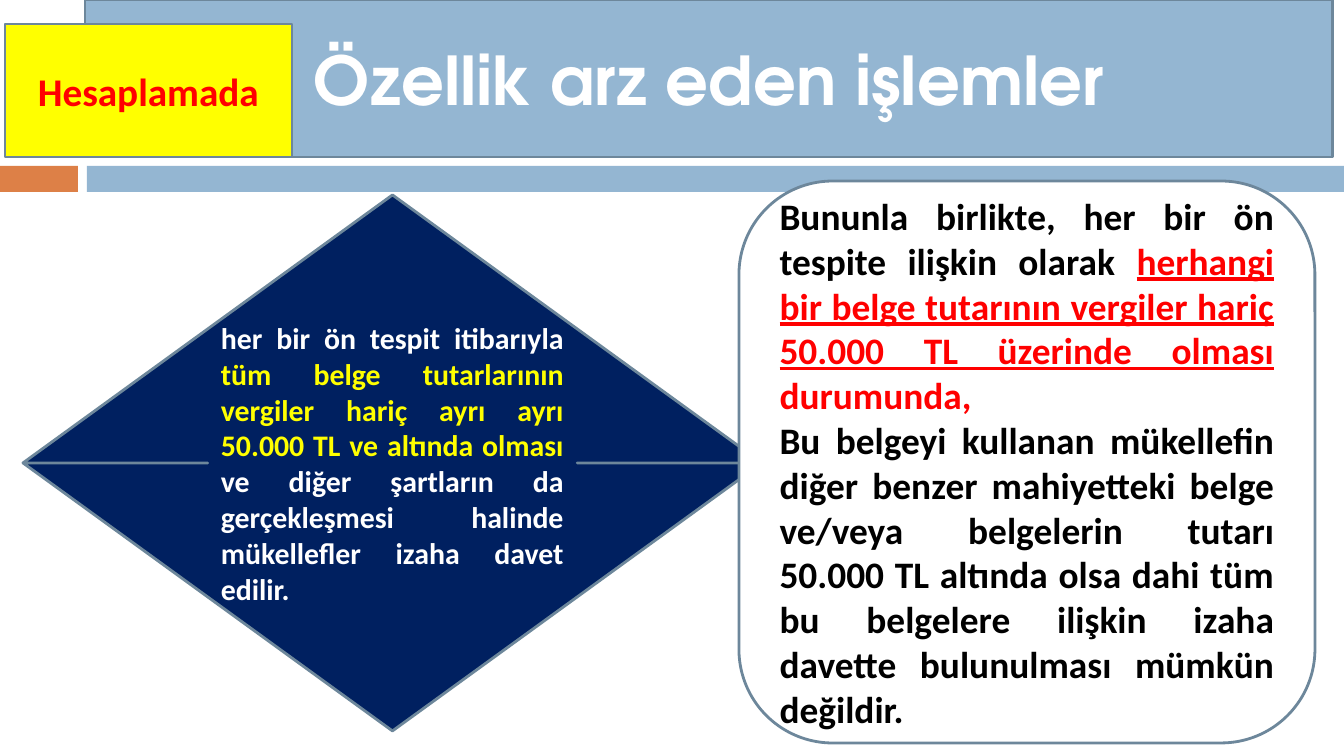
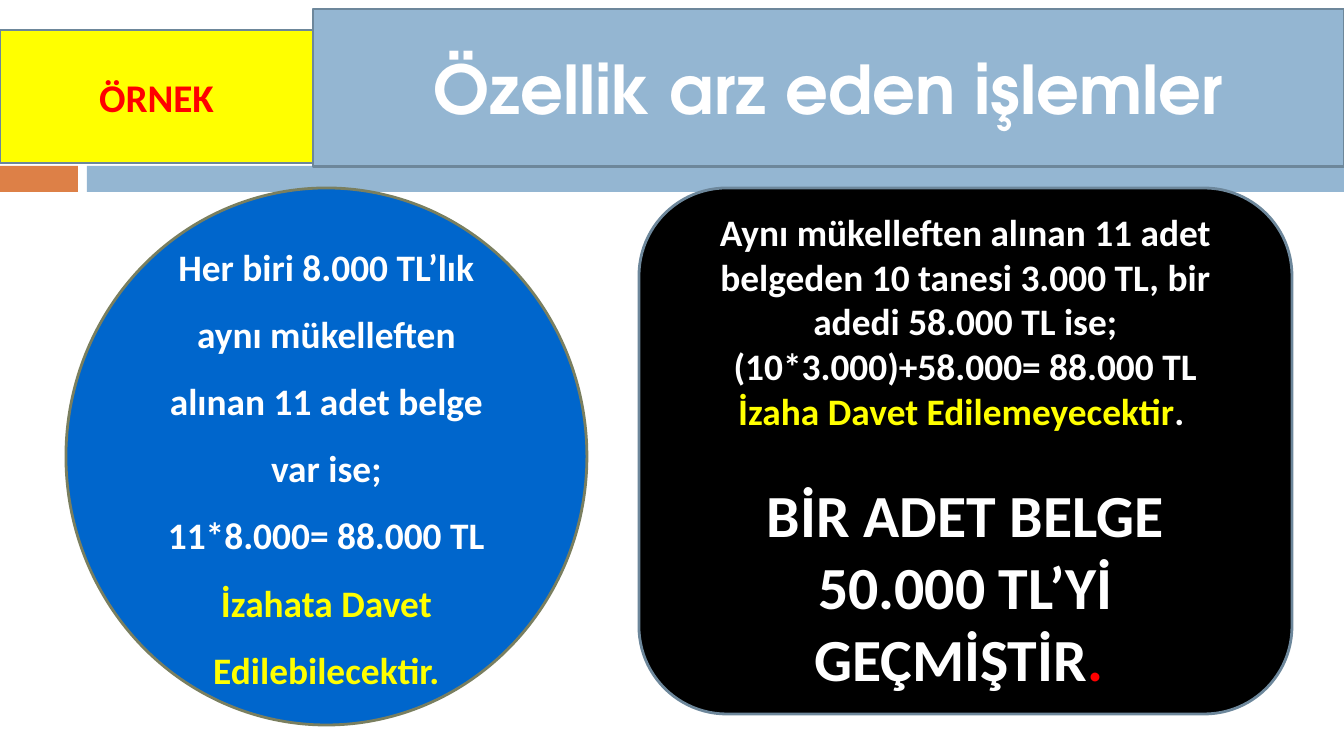
from dataclasses import dataclass

from pptx import Presentation
from pptx.dml.color import RGBColor
from pptx.enum.shapes import MSO_SHAPE
from pptx.enum.text import MSO_ANCHOR, PP_ALIGN
from pptx.util import Emu, Pt

RECT = MSO_SHAPE.RECTANGLE
PROCESS = MSO_SHAPE.FLOWCHART_PROCESS
ARROW = MSO_SHAPE.UP_DOWN_ARROW
ROUNDED = MSO_SHAPE.ROUNDED_RECTANGLE
OVAL = MSO_SHAPE.OVAL
MIDDLE = MSO_ANCHOR.MIDDLE
CENTER = PP_ALIGN.CENTER
JUSTIFY = PP_ALIGN.JUSTIFY

SLIDE_W, SLIDE_H = 1344, 756
SCALE = 9144000 / SLIDE_W


@dataclass(frozen=True)
class Theme:
    band: str = "94B6D2"
    accent: str = "DD8047"
    outline: str = "6D879B"
    olive: str = "7A7F5F"
    navy: str = "002060"
    blue: str = "0066CC"
    yellow: str = "FFFF00"
    red: str = "FF0000"
    white: str = "FFFFFF"
    black: str = "000000"
    title_font: str = "TeX Gyre Adventor"
    body_font: str = "Calibri"
    title_size: int = 36
    tag_size: int = 21
    body_size: int = 20
    small_size: int = 16
    large_size: int = 32
    line_width: float = 1.5


T = Theme()

TITLE = "Özellik arz eden işlemler"
BANDS = [((0, 166, 78, 26), T.accent), ((87, 166, 1257, 26), T.band)]

SLIDES = [
    {
        "title_box": (85, 0, 1248, 157),
        "tag": "Hesaplamada",
        "tag_box": (5, 24, 287, 133),
        "panels": [
            {
                "kind": ARROW, "box": (23, 195, 739, 536), "fill": T.navy,
                "align": JUSTIFY, "size": T.small_size,
                "paragraphs": [
                    [("her bir ön tespit itibarıyla ", T.white),
                     ("tüm belge tutarlarının vergiler hariç ayrı ayrı "
                      "50.000 TL ve altında olması ", T.yellow),
                     ("ve diğer şartların da gerçekleşmesi halinde "
                      "mükellefler izaha davet edilir. ", T.white)],
                ],
            },
            {
                "kind": ROUNDED, "box": (739, 181, 576, 562), "fill": T.white,
                "align": JUSTIFY,
                "paragraphs": [
                    [("Bununla birlikte, her bir ön tespite ilişkin olarak ", T.black),
                     ("herhangi bir belge tutarının vergiler hariç "
                      "50.000 TL üzerinde olması", T.red, {"underline": True}),
                     (" durumunda, ", T.red)],
                    [("Bu belgeyi kullanan mükellefin diğer benzer mahiyetteki "
                      "belge ve/veya belgelerin tutarı 50.000 TL altında olsa "
                      "dahi tüm bu belgelere ilişkin izaha davette bulunulması "
                      "mümkün değildir.", T.black)],
                ],
            },
        ],
    },
    {
        "title_box": (313, 9, 1031, 158),
        "tag": "ÖRNEK",
        "tag_box": (0, 30, 313, 133),
        "panels": [
            {
                "kind": OVAL, "box": (66, 188, 521, 537), "fill": T.blue,
                "line": T.olive, "spacing": 1.5,
                "paragraphs": [
                    [("Her biri 8.000 TL’lık aynı mükelleften alınan "
                      "11 adet belge var ise;", T.white)],
                    [("11*8.000= 88.000 TL", T.white)],
                    [("İzahata Davet Edilebilecektir.", T.yellow)],
                ],
            },
            {
                "kind": ROUNDED, "box": (639, 188, 653, 526), "fill": T.black,
                "last_gap": 24,
                "paragraphs": [
                    [("Aynı mükelleften alınan 11 adet belgeden 10 tanesi "
                      "3.000 TL, bir adedi 58.000 TL ise;", T.white)],
                    [("(10*3.000)+58.000= 88.000 TL", T.white)],
                    [("İzaha Davet Edilemeyecektir", T.yellow), (". ", T.white)],
                    [("BİR ADET BELGE 50.000 TL’Yİ GEÇMİŞTİR", T.white,
                      {"size": Pt(T.large_size)}),
                     (". ", T.red, {"size": Pt(T.large_size)})],
                ],
            },
        ],
    },
]


def px(n):
    return Emu(round(n * SCALE))


def add_box(s, kind, box, fill, line=None):
    sp = s.shapes.add_shape(kind, *map(px, box))
    sp.shadow.inherit = False
    sp.fill.solid()
    sp.fill.fore_color.rgb = RGBColor.from_string(fill)
    if line:
        sp.line.color.rgb = RGBColor.from_string(line)
        sp.line.width = Pt(T.line_width)
    else:
        sp.line.fill.background()
    return sp


def write(sp, paragraphs, size=T.body_size, font=T.body_font, align=CENTER,
          spacing=None, last_gap=None):
    tf = sp.text_frame
    tf.word_wrap = True
    tf.vertical_anchor = MIDDLE
    for i, runs in enumerate(paragraphs):
        p = tf.add_paragraph() if i else tf.paragraphs[0]
        p.alignment = align
        if spacing:
            p.line_spacing = spacing
        for text, color, *extra in runs:
            r = p.add_run()
            r.text = text
            r.font.name = font
            r.font.size = Pt(size)
            r.font.bold = True
            r.font.color.rgb = RGBColor.from_string(color)
            for key, value in (extra[0] if extra else {}).items():
                setattr(r.font, key, value)
    if last_gap:
        p.space_before = Pt(last_gap)


def add_panel(s, kind, box, fill, paragraphs, line=T.outline, **style):
    write(add_box(s, kind, box, fill, line), paragraphs, **style)


def build_slide(prs, content):
    s = prs.slides.add_slide(prs.slide_layouts[6])
    for box, fill in BANDS:
        add_box(s, RECT, box, fill)
    add_panel(s, RECT, content["title_box"], T.band, [[(TITLE, T.white)]],
              size=T.title_size, font=T.title_font)
    add_panel(s, PROCESS, content["tag_box"], T.yellow,
              [[(content["tag"], T.red)]], size=T.tag_size)
    for panel in content["panels"]:
        add_panel(s, **panel)


def main():
    prs = Presentation()
    prs.slide_width, prs.slide_height = px(SLIDE_W), px(SLIDE_H)
    for content in SLIDES:
        build_slide(prs, content)
    prs.save("out.pptx")


if __name__ == "__main__":
    main()
